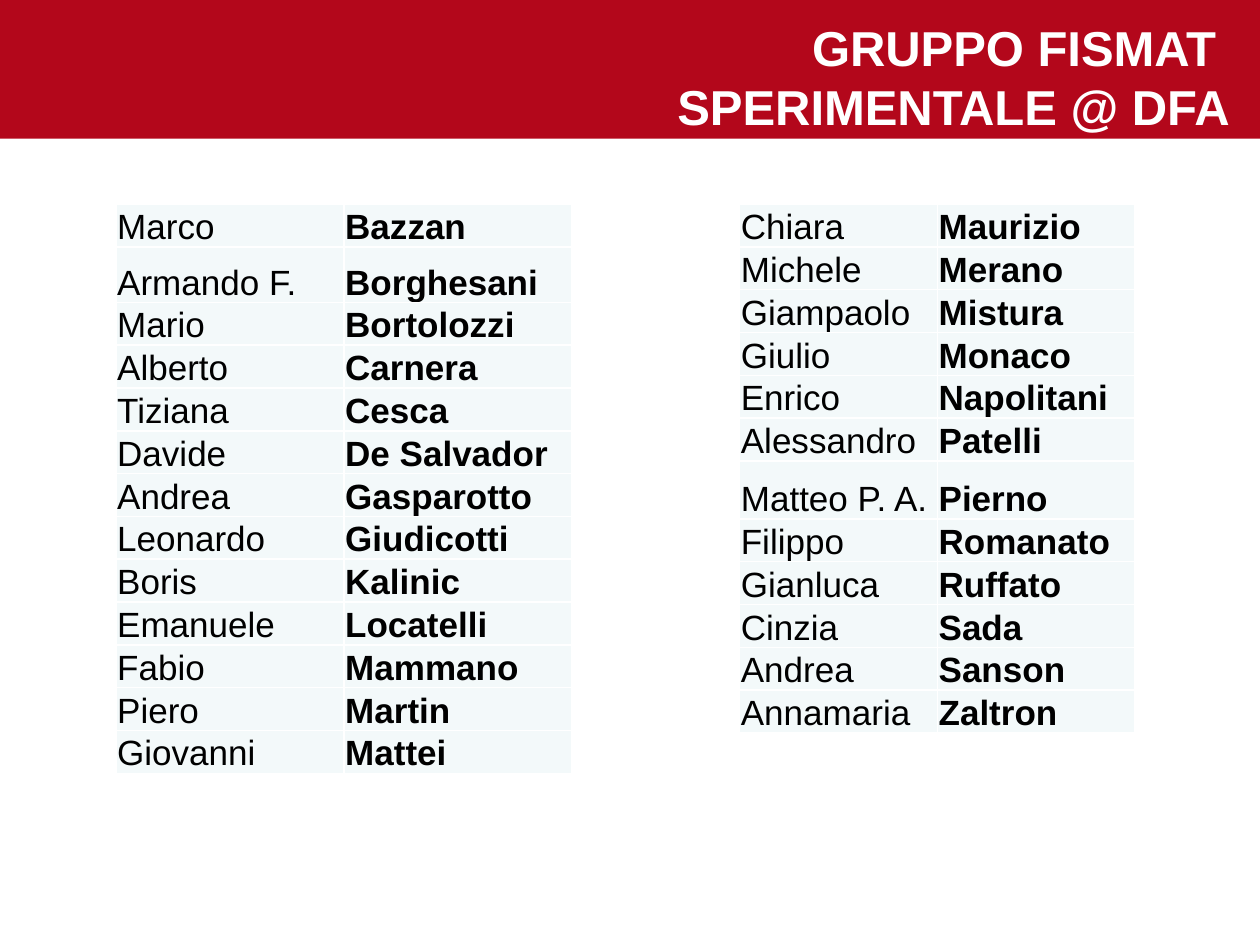
import dataclasses

import lxml.etree
import pptx
import pptx.dml.color
import pptx.enum.shapes
import pptx.enum.text
import pptx.oxml.ns
import pptx.util

Inches = pptx.util.Inches
Pt = pptx.util.Pt
Anchor = pptx.enum.text.MSO_ANCHOR


@dataclasses.dataclass(frozen=True)
class Theme:
    font: str = "Arial"
    red: str = "B3071B"
    white: str = "FFFFFF"
    black: str = "000000"
    cell: str = "F3F9FA"
    title_size: int = 28
    table_size: int = 20
    border: int = 1


THEME = Theme()
ROW_HEIGHT = 0.34

TITLE_LINES = ["GRUPPO FISMAT ", "SPERIMENTALE @ DFA"]

FIRST_MEMBERS = [
    ("Marco", "Bazzan"),
    ("Armando F.", "Borghesani"),
    ("Mario", "Bortolozzi"),
    ("Alberto", "Carnera"),
    ("Tiziana", "Cesca"),
    ("Davide", "De Salvador"),
    ("Andrea", "Gasparotto"),
    ("Leonardo", "Giudicotti"),
    ("Boris", "Kalinic"),
    ("Emanuele", "Locatelli"),
    ("Fabio", "Mammano"),
    ("Piero", "Martin"),
    ("Giovanni", "Mattei"),
]

SECOND_MEMBERS = [
    ("Chiara", "Maurizio"),
    ("Michele", "Merano"),
    ("Giampaolo", "Mistura"),
    ("Giulio", "Monaco"),
    ("Enrico", "Napolitani"),
    ("Alessandro", "Patelli"),
    ("Matteo P. A.", "Pierno"),
    ("Filippo", "Romanato"),
    ("Gianluca", "Ruffato"),
    ("Cinzia", "Sada"),
    ("Andrea", "Sanson"),
    ("Annamaria", "Zaltron"),
]


def color(value):
    return pptx.dml.color.RGBColor.from_string(value)


def add_span(para, text, size, ink, bold):
    span = para.add_run()
    span.text = text
    span.font.name = THEME.font
    span.font.size = Pt(size)
    span.font.bold = bold
    span.font.color.rgb = color(ink)


def add_band(page):
    band = page.shapes.add_shape(
        pptx.enum.shapes.MSO_SHAPE.RECTANGLE,
        Inches(-0.11), Inches(0), Inches(10.11), Inches(1.1),
    )
    band.shadow.inherit = False
    band.fill.solid()
    band.fill.fore_color.rgb = color(THEME.red)
    band.line.fill.background()
    return band


def fill_title(page, lines):
    title = page.shapes.title
    title.left, title.top = Inches(3.11), Inches(0)
    title.width, title.height = Inches(6.89), Inches(1.1)
    frame = title.text_frame
    frame.auto_size = pptx.enum.text.MSO_AUTO_SIZE.NONE
    frame.word_wrap = True
    frame.vertical_anchor = Anchor.MIDDLE
    frame.margin_left, frame.margin_top = Inches(0.1), Inches(0.16)
    frame.margin_right, frame.margin_bottom = Inches(0.24), Inches(0.05)
    for index, line in enumerate(lines):
        para = frame.add_paragraph() if index else frame.paragraphs[0]
        para.alignment = pptx.enum.text.PP_ALIGN.RIGHT
        add_span(para, line, THEME.title_size, THEME.white, True)
    return title


def set_borders(cell):
    qn = pptx.oxml.ns.qn
    properties = cell._tc.get_or_add_tcPr()
    for index, side in enumerate(("a:lnL", "a:lnR", "a:lnT", "a:lnB")):
        line = lxml.etree.Element(qn(side), w=str(Pt(THEME.border)))
        fill = lxml.etree.SubElement(line, qn("a:solidFill"))
        lxml.etree.SubElement(fill, qn("a:srgbClr"), val=THEME.white)
        properties.insert(index, line)


def format_cell(cell, text, bold):
    cell.fill.solid()
    cell.fill.fore_color.rgb = color(THEME.cell)
    cell.vertical_anchor = Anchor.BOTTOM
    cell.margin_left = cell.margin_right = cell.margin_top = Inches(0.01)
    cell.margin_bottom = 0
    set_borders(cell)
    add_span(cell.text_frame.paragraphs[0], text, THEME.table_size, THEME.black, bold)


def add_member_table(page, members, left, column_width, tall_row, tall_height):
    heights = [ROW_HEIGHT] * len(members)
    heights[tall_row] = tall_height
    table = page.shapes.add_table(
        len(members), 2, Inches(left), Inches(1.62),
        Inches(2 * column_width), Inches(sum(heights)),
    ).table
    table.first_row = False
    table.horz_banding = False
    for column in table.columns:
        column.width = Inches(column_width)
    for row, height, names in zip(table.rows, heights, members):
        row.height = Inches(height)
        for index, (cell, name) in enumerate(zip(row.cells, names)):
            format_cell(cell, name, bold=index == 1)


def main():
    deck = pptx.Presentation()
    deck.slide_width, deck.slide_height = Inches(10), Inches(7.5)
    page = deck.slides.add_slide(deck.slide_layouts.get_by_name("Title Only"))
    title = fill_title(page, TITLE_LINES)
    band = add_band(page)
    title.element.addprevious(band.element)
    add_member_table(page, FIRST_MEMBERS, 0.92, 1.81, 1, 0.44)
    add_member_table(page, SECOND_MEMBERS, 5.87, 1.57, 6, 0.46)
    deck.save("out.pptx")


if __name__ == "__main__":
    main()
